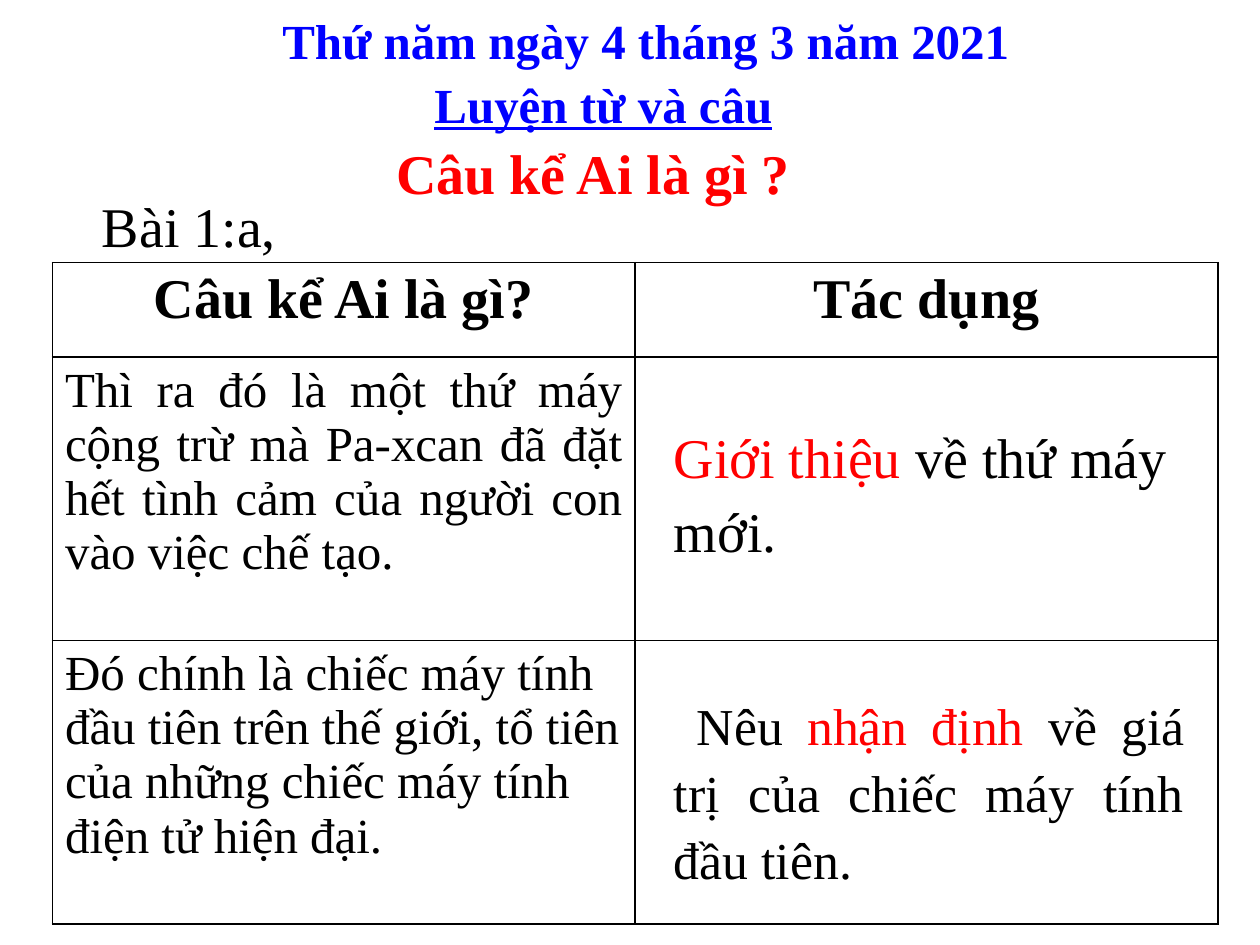
from dataclasses import dataclass

from lxml import etree
from pptx import Presentation
from pptx import util as u
from pptx.dml.color import RGBColor
from pptx.enum import text
from pptx.oxml.ns import qn

BLACK = RGBColor(0x00, 0x00, 0x00)
BLUE = RGBColor(0x00, 0x00, 0xFF)
RED = RGBColor(0xFF, 0x00, 0x00)
WHITE = RGBColor(0xFF, 0xFF, 0xFF)
SERIF, SANS = "Times New Roman", "Calibri"
LEFT, CENTER, JUSTIFY = text.PP_ALIGN.LEFT, text.PP_ALIGN.CENTER, text.PP_ALIGN.JUSTIFY
SLIDE_WIDTH, SLIDE_HEIGHT = u.Inches(10), u.Inches(7.5)
UNIT = SLIDE_WIDTH / 24


@dataclass(frozen=True)
class Words:
    """One run of text in a single style."""
    content: str
    color: RGBColor = BLACK
    bold: bool = False
    underline: bool = False
    font: str = SERIF


@dataclass(frozen=True)
class Line:
    """A paragraph with its size, alignment and left indent in grid units."""
    words: tuple[Words, ...]
    size: float = 32
    align: text.PP_ALIGN = LEFT
    spacing: float = 1.0
    indent: float = 0


@dataclass(frozen=True)
class Note:
    """A text box placed on the 24 by 18 grid."""
    column: float
    row: float
    columns: float
    rows: float
    lines: tuple[Line, ...]


ROW_HEIGHTS = (1.8, 5.4, 5.4)
COLUMN_WIDTH = 11.1
SENTENCES = (
    (Line((Words("Câu kể Ai là gì?", bold=True),), align=CENTER),
     Line((Words("Tác dụng", bold=True),), align=CENTER)),
    (Line((Words("Thì ra đó là một thứ máy cộng trừ mà Pa-xcan đã đặt hết "
                 "tình cảm của người con vào việc chế tạo."),), 28, JUSTIFY), None),
    (Line((Words("Đó chính là chiếc máy tính đầu tiên trên thế giới, tổ tiên "
                 "của những chiếc máy tính điện tử hiện đại."),), 28), None),
)
EXERCISE = Note(-1, 3.4, 9.2, 1.6, (Line((Words("Bài 1:a,"),), align=CENTER, spacing=1.1),))
ANSWERS = (
    Note(12.6, 7.8, 10, 3.2, (
        Line((Words("Giới thiệu ", RED), Words("về thứ máy mới.")), spacing=1.1),)),
    Note(12.6, 13, 10.2, 3.6, (
        Line((Words(" ", RED, font=SANS), Words("Nêu "), Words("nhận định ", RED),
              Words("về giá trị của chiếc máy tính đầu tiên.")), 29.6, JUSTIFY, 1.08),)),
)
HEADINGS = (
    Note(-0.8, 0, 26.2, 2.5, (
        Line((Words("Thứ năm ngày 4 tháng 3 năm 2021", BLUE, True),), 28, CENTER, 1.08),
        Line((Words("Luyện từ và câu", BLUE, True, True),), 28, LEFT, 1.08, 8.84))),
    Note(7, 2.4, 8.6, 1, (
        Line((Words("Câu kể Ai là gì ?", RED, True),), align=CENTER, spacing=1.1),)),
)


def grid(units: float) -> u.Emu:
    """Turn grid units into a length."""
    return u.Emu(round(units * UNIT))


def write(frame, lines: tuple[Line, ...]) -> None:
    """Write lines into a text frame, run by run."""
    for number, line in enumerate(lines):
        paragraph = frame.add_paragraph() if number else frame.paragraphs[0]
        paragraph.alignment = line.align
        paragraph.line_spacing = line.spacing
        if line.indent:
            paragraph._p.get_or_add_pPr().set("marL", str(grid(line.indent)))
        for words in line.words:
            run = paragraph.add_run()
            run.text = words.content
            run.font.name = words.font
            run.font.size = u.Pt(line.size)
            run.font.bold = words.bold
            run.font.underline = words.underline
            run.font.color.rgb = words.color


def add_note(slide, note: Note) -> None:
    """Add one wrapped text box."""
    box = slide.shapes.add_textbox(
        grid(note.column), grid(note.row), grid(note.columns), grid(note.rows))
    box.text_frame.word_wrap = True
    write(box.text_frame, note.lines)


def outline(cell) -> None:
    """Give a cell a thin black border on every side."""
    properties = cell._tc.get_or_add_tcPr()
    for position, side in enumerate(("a:lnL", "a:lnR", "a:lnT", "a:lnB")):
        border = etree.Element(qn(side), w=str(u.Pt(1)))
        fill = etree.SubElement(border, qn("a:solidFill"))
        etree.SubElement(fill, qn("a:srgbClr"), val=str(BLACK))
        properties.insert(position, border)


def add_sentences(slide) -> None:
    """Add the table of sentences and their uses."""
    table = slide.shapes.add_table(
        len(SENTENCES), 2, grid(1), grid(5), grid(2 * COLUMN_WIDTH), grid(sum(ROW_HEIGHTS))).table
    table.first_row = table.horz_banding = False
    for column in table.columns:
        column.width = grid(COLUMN_WIDTH)
    for r, (height, sentences) in enumerate(zip(ROW_HEIGHTS, SENTENCES)):
        table.rows[r].height = grid(height)
        for c, line in enumerate(sentences):
            cell = table.cell(r, c)
            cell.fill.solid()
            cell.fill.fore_color.rgb = WHITE
            outline(cell)
            if line:
                write(cell.text_frame, (line,))


def main() -> None:
    """Build the lesson slide and save it."""
    lesson = Presentation()
    lesson.slide_width, lesson.slide_height = SLIDE_WIDTH, SLIDE_HEIGHT
    slide = lesson.slides.add_slide(lesson.slide_layouts[6])
    add_note(slide, EXERCISE)
    add_sentences(slide)
    for note in ANSWERS + HEADINGS:
        add_note(slide, note)
    lesson.save("out.pptx")


if __name__ == "__main__":
    main()
